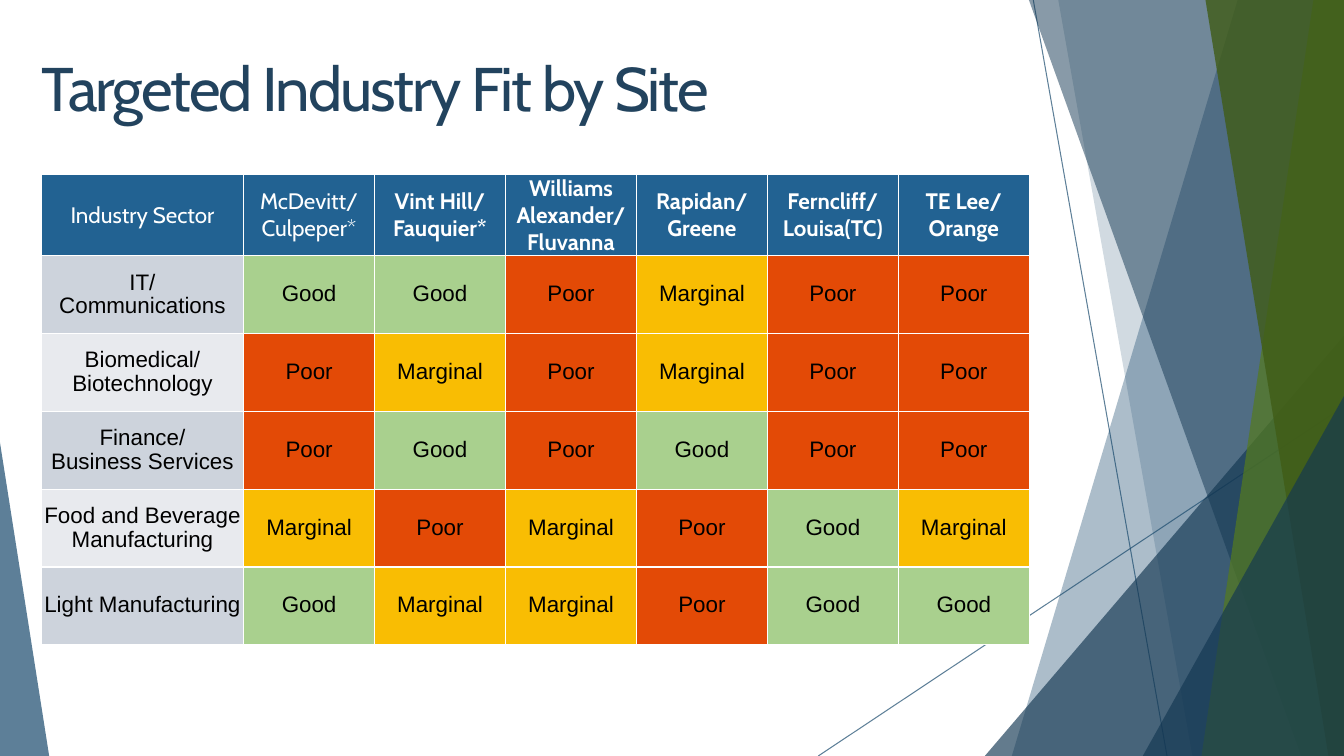
from lxml import etree
from pptx import Presentation
from pptx.dml import color
from pptx.enum import shapes, text
from pptx.oxml import ns
from pptx.util import Cm, Pt

WIDE, HIGH = 33.87, 19.05
HUES = {
    "blue": "19496D", "navy": "133752", "lime": "557B1D", "moss": "405C16",
    "title": "22435E", "head": "226292", "white": "FFFFFF", "black": "000000",
    "band0": "CDD3DC", "band1": "E8EAEE",
    "Good": "A9D08E", "Marginal": "F9BD03", "Poor": "E34A06",
}
SITES = ["Industry Sector", "McDevitt/ Culpeper*", "Vint Hill/ Fauquier*",
         "Williams Alexander/ Fluvanna", "Rapidan/ Greene",
         "Ferncliff/ Louisa(TC)", "TE Lee/ Orange"]
GRADES = {"G": "Good", "M": "Marginal", "P": "Poor"}
SECTORS = [
    ("IT/\nCommunications", "GGPMPP"),
    ("Biomedical/\nBiotechnology", "PMPMPP"),
    ("Finance/\nBusiness Services", "PGPGPP"),
    ("Food and Beverage Manufacturing", "MPMPGM"),
    ("Light Manufacturing", "GMMPGG"),
]
# Slab: top x, foot x. Wedge: left, top, width, apex.
DECOR = [
    ("slab", (31.19, 25.5), "blue", 36),
    ("slab", (26.67, 30.05), "blue", 20),
    ("wedge", (24.82, 8.46, 9.05, 1), "navy", 66),
    ("slab", (25.93, 32.79), "navy", 50),
    ("slab", (33.1, 30.28), "lime", 70),
    ("slab", (30.38, 33.48), "moss", 80),
    ("wedge", (28.8, 9.98, 5.07, 1), "navy", 66),
    ("wedge", (0, 11.15, 1.24, 0), "blue", 70),
]


def paint(fill, hue, alpha=100):
    """Fill with a solid colour at an opacity in percent."""
    fill.solid()
    fill.fore_color.rgb = color.RGBColor.from_string(HUES[hue])
    if alpha < 100:
        tone = fill._xPr.find(".//" + ns.qn("a:srgbClr"))
        etree.SubElement(tone, ns.qn("a:alpha"), val=str(alpha * 1000))


def edge(cell):
    """Give all four sides of a cell a thin white border."""
    props = cell._tc.get_or_add_tcPr()
    for side in "LRTB":
        line = etree.SubElement(props, ns.qn("a:ln" + side), w=str(Pt(1)))
        solid = etree.SubElement(line, ns.qn("a:solidFill"))
        etree.SubElement(solid, ns.qn("a:srgbClr"), val=HUES["white"])


prs = Presentation()
prs.slide_width, prs.slide_height = Cm(WIDE), Cm(HIGH)
slide = prs.slides.add_slide(prs.slide_layouts[6])
tree = slide.shapes

# Background lines and facets
for ends in [(26.04, 0, 29.41, HIGH), (WIDE, 10.24, 20.62, HIGH)]:
    ray = tree.add_connector(shapes.MSO_CONNECTOR.STRAIGHT, *map(Cm, ends))
    ray.line.width = Pt(0.75)
    paint(ray.line.fill, "blue", 70)
    etree.SubElement(ray._element.spPr, ns.qn("a:effectLst"))

for kind, place, hue, alpha in DECOR:
    if kind == "slab":
        top, foot = place
        pen = tree.build_freeform(Cm(top), 0)
        pen.add_line_segments([(Cm(WIDE), 0), (Cm(WIDE), Cm(HIGH)),
                               (Cm(foot), Cm(HIGH))])
        facet = pen.convert_to_shape()
    else:
        left, top, width, apex = place
        facet = tree.add_shape(shapes.MSO_SHAPE.ISOSCELES_TRIANGLE, Cm(left),
                               Cm(top), Cm(width), Cm(HIGH - top))
        facet.adjustments[0] = apex
    facet.shadow.inherit = False
    facet.line.fill.background()
    paint(facet.fill, hue, alpha)

# Table of fit by site
rows = [SITES] + [[name] + [GRADES[g] for g in marks] for name, marks in SECTORS]
grid = tree.add_table(len(rows), len(SITES), Cm(1.04), Cm(4.4),
                      Cm(24.9), Cm(11.83)).table
grid.first_row = grid.horz_banding = False
for c, col in enumerate(grid.columns):
    col.width = Cm(3.3 if c else 5.1)
for r, row in enumerate(rows):
    grid.rows[r].height = Cm(1.96 if r else 2.03)
    for c, label in enumerate(row):
        cell = grid.cell(r, c)
        cell.margin_left = cell.margin_right = 0
        cell.margin_top = cell.margin_bottom = 0
        cell.vertical_anchor = text.MSO_ANCHOR.MIDDLE
        edge(cell)
        hue = "head" if r == 0 else label if c else f"band{(r - 1) % 2}"
        paint(cell.fill, hue)
        cell.text_frame.text = label
        for para in cell.text_frame.paragraphs:
            para.alignment = text.PP_ALIGN.CENTER
            para.line_spacing = 0.95 if r else 1.0
            para.font.size = Pt(16)
            para.font.name = "Arial" if r else "Cabin"
            para.font.bold = r == 0 and c > 1
            paint(para.font.fill, "black" if r else "white")

# Title
frame = tree.add_textbox(Cm(1.04), Cm(1.4), Cm(23.62), Cm(1)).text_frame
frame.word_wrap = True
frame.margin_left = frame.margin_right = 0
frame.margin_top = frame.margin_bottom = 0
para = frame.paragraphs[0]
para.line_spacing = 0.95
para.font.size = Pt(44)
para.font.name = "Cabin"
paint(para.font.fill, "title")
run = para.add_run()
run.text = "Targeted Industry Fit by Site"
run._r.get_or_add_rPr().set("spc", "-150")

prs.save("out.pptx")
